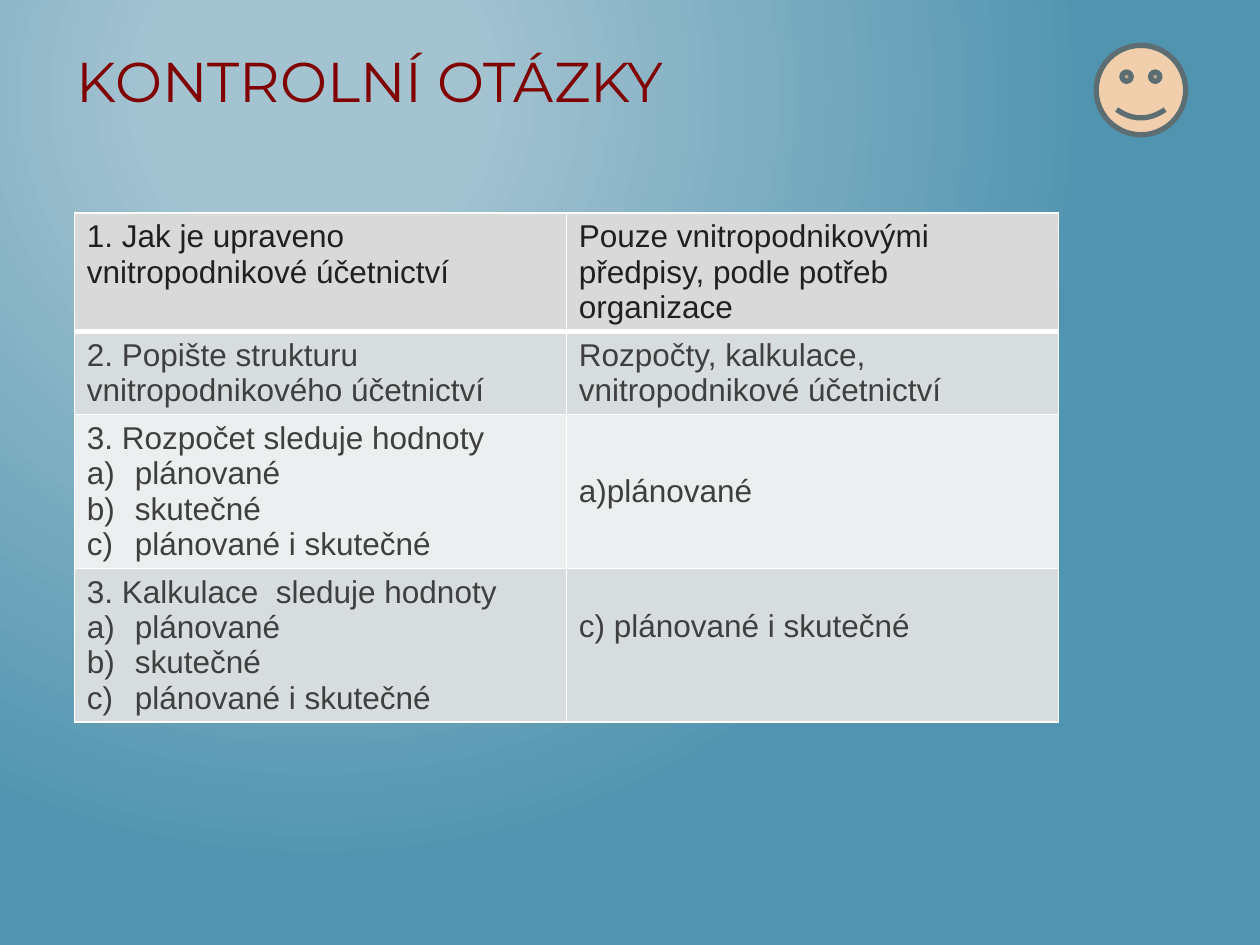
from dataclasses import dataclass
from typing import Any

import lxml.etree
import pptx
import pptx.dml.color
import pptx.enum.shapes
import pptx.enum.text
import pptx.oxml
import pptx.oxml.ns
import pptx.util

WIDTH, HEIGHT = 10, 7.5
CHOICES = ("plánované", "skutečné", "plánované i skutečné")
LINE_HEIGHT, ROW_PADDING = 0.28, 0.1
HANGING = 0.38


@dataclass(frozen=True)
class Question:
    text: str
    answer: str
    lines: int
    fill: str
    color: str = "3F3F3F"
    choices: tuple[str, ...] = ()
    answer_bottom: float = 0.05


QUESTIONS = (
    Question("1. Jak je upraveno vnitropodnikové účetnictví",
             "Pouze vnitropodnikovými předpisy, podle potřeb organizace",
             3, "D9D9D9", "202020"),
    Question("2. Popište strukturu vnitropodnikového účetnictví",
             "Rozpočty, kalkulace, vnitropodnikové účetnictví", 2, "D7DDDE"),
    Question("3. Rozpočet sleduje hodnoty", "a)plánované",
             4, "ECEFEF", choices=CHOICES),
    Question("3. Kalkulace  sleduje hodnoty", "c) plánované i skutečné",
             4, "D7DDDE", choices=CHOICES, answer_bottom=0.35),
)


def rgb(value: str) -> pptx.dml.color.RGBColor:
    return pptx.dml.color.RGBColor.from_string(value)


def element(xml: str) -> Any:
    return pptx.oxml.parse_xml(
        xml.replace(" ", f" {pptx.oxml.ns.nsdecls('a')} ", 1))


def add_run(para: Any, text: str, size: int, font: str, color: str) -> None:
    span = para.add_run()
    span.text = text
    span.font.size = pptx.util.Pt(size)
    span.font.name = font
    span.font.bold = False
    span.font.color.rgb = rgb(color)


def number_paragraph(para: Any) -> None:
    properties = para._p.get_or_add_pPr()
    indent = pptx.util.Inches(HANGING)
    properties.set("marL", str(indent))
    properties.set("indent", str(-indent))
    properties.append(element('<a:buAutoNum type="alphaLcParenR"/>'))


def set_borders(cell: Any, top: int, bottom: int) -> None:
    properties = cell._tc.get_or_add_tcPr()
    for index, (side, points) in enumerate(
            (("L", 1), ("R", 1), ("T", top), ("B", bottom))):
        properties.insert(index, element(
            f'<a:ln{side} w="{pptx.util.Pt(points)}"><a:solidFill>'
            f'<a:srgbClr val="FFFFFF"/></a:solidFill></a:ln{side}>'))


def paint_background(page: Any) -> None:
    fill = page.background.fill
    fill.gradient()
    for stop, (position, color) in zip(
            fill.gradient_stops, ((0.2, "A3C3D1"), (1, "5194AF"))):
        stop.position = position
        stop.color.rgb = rgb(color)
    gradient = next(page._element.iter(pptx.oxml.ns.qn("a:gradFill")))
    linear = gradient.find(pptx.oxml.ns.qn("a:lin"))
    gradient.replace(linear, element(
        '<a:path path="circle"><a:fillToRect l="50000" t="20000" '
        'r="100000" b="100000"/></a:path>'))


def add_title(page: Any, text: str) -> None:
    box = page.shapes.add_textbox(*map(pptx.util.Inches, (0.51, 0.28, 7.87, 0.71)))
    box.text_frame.word_wrap = True
    box.text_frame.vertical_anchor = pptx.enum.text.MSO_ANCHOR.MIDDLE
    add_run(box.text_frame.paragraphs[0], text, 32, "Montserrat", "800000")


def add_smiley(page: Any) -> None:
    face = page.shapes.add_shape(
        pptx.enum.shapes.MSO_SHAPE.SMILEY_FACE,
        *map(pptx.util.Inches, (0.87 * WIDTH, 0.36, 0.71, 0.71)))
    face.shadow.inherit = False
    face.fill.solid()
    face.fill.fore_color.rgb = rgb("F1CFAD")
    face.line.color.rgb = rgb("5C6E72")
    face.line.width = pptx.util.Pt(3)


def add_questions(page: Any, questions: tuple[Question, ...]) -> None:
    heights = [item.lines * LINE_HEIGHT + ROW_PADDING for item in questions]
    table = page.shapes.add_table(
        len(questions), 2,
        *map(pptx.util.Inches, (0.59, 1.69, 7.81, sum(heights)))).table
    for index, (item, height) in enumerate(zip(questions, heights)):
        table.rows[index].height = pptx.util.Inches(height)
        question, answer = table.rows[index].cells
        for cell, text in ((question, item.text), (answer, item.answer)):
            cell.fill.solid()
            cell.fill.fore_color.rgb = rgb(item.fill)
            set_borders(cell, 3 if index == 1 else 1, 3 if index == 0 else 1)
            add_run(cell.text_frame.paragraphs[0], text, 18, "Arial", item.color)
        for choice in item.choices:
            para = question.text_frame.add_paragraph()
            number_paragraph(para)
            add_run(para, choice, 18, "Arial", item.color)
        answer.vertical_anchor = pptx.enum.text.MSO_ANCHOR.MIDDLE
        answer.margin_bottom = pptx.util.Inches(item.answer_bottom)


def main() -> None:
    deck = pptx.Presentation()
    deck.slide_width = pptx.util.Inches(WIDTH)
    deck.slide_height = pptx.util.Inches(HEIGHT)
    page = deck.slides.add_slide(deck.slide_layouts[6])
    paint_background(page)
    add_questions(page, QUESTIONS)
    add_title(page, "KONTROLNÍ OTÁZKY")
    add_smiley(page)
    deck.save("out.pptx")


if __name__ == "__main__":
    main()
